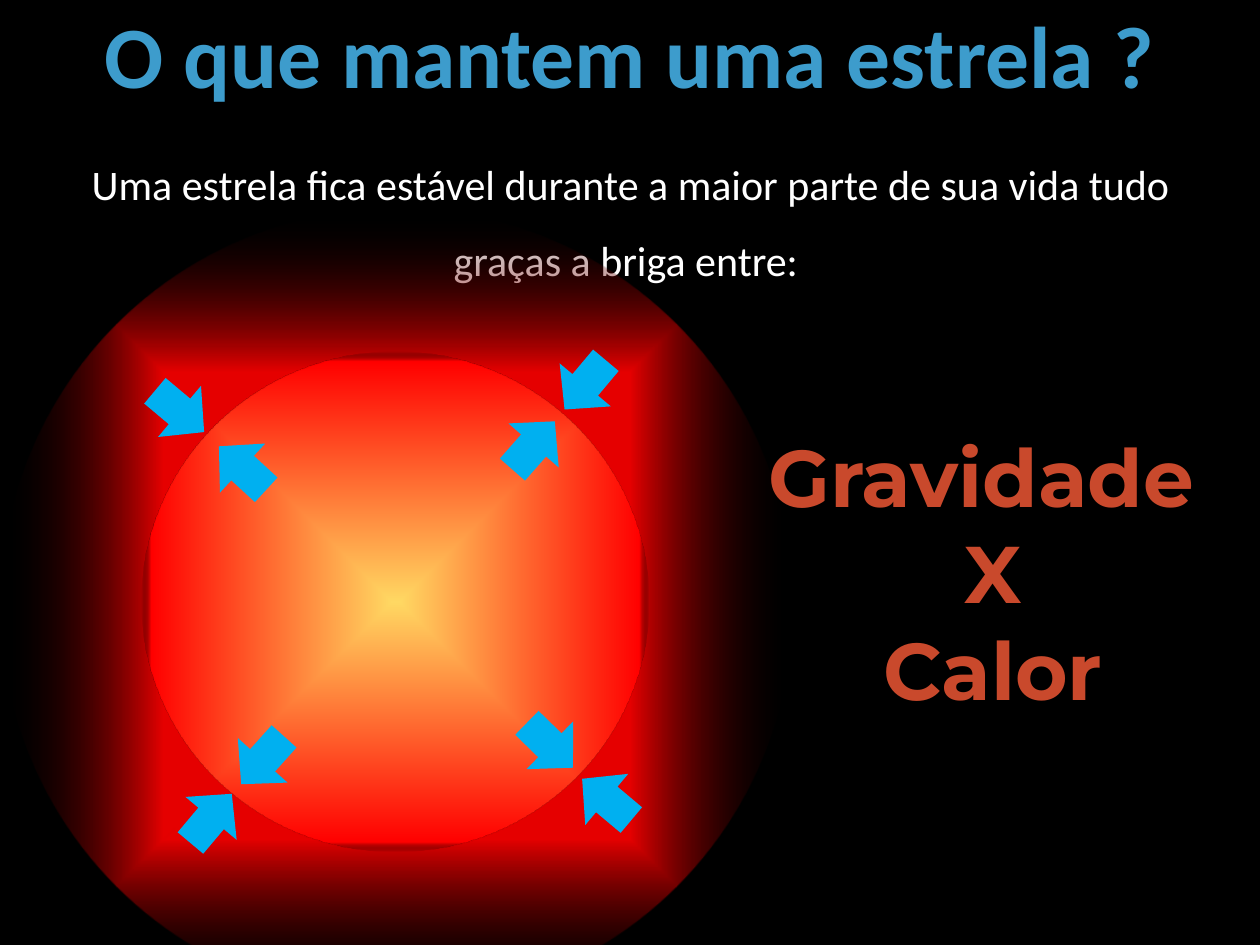
from dataclasses import dataclass

from lxml.etree import SubElement
from pptx import Presentation
from pptx.dml.color import RGBColor
from pptx.enum.shapes import MSO_SHAPE
from pptx.enum.text import MSO_ANCHOR, MSO_AUTO_SIZE, PP_ALIGN
from pptx.oxml.ns import qn
from pptx.util import Inches, Pt

CELL = 0.1  # the slide is a grid of 100 columns by 75 rows
COLS, ROWS = 100, 75


@dataclass(frozen=True)
class Theme:
    background: str = "000000"
    title: str = "3D9CCC"
    body: str = "FFFFFF"
    forces: str = "C9492C"
    arrow: str = "00B0F0"
    text_font: str = "Calibri"
    forces_font: str = "Montserrat"
    title_size: float = 50
    body_size: float = 24
    forces_size: float = 45.9


THEME = Theme()

# Gradient stops from the centre outwards: position %, colour, opacity %
HALO_STOPS = [(59, "FF0000", 89), (100, "000000", 0)]
CORE_STOPS = [(0, "FFD963", 100), (96, "FF0000", 100), (100, "000000", 0)]

ARROW_SIZE = (5.3, 5.1)
# Left column, top row, rotation
GRAVITY_ARROWS = [(43.8, 28, 40), (14.1, 62.4, 220), (11.6, 30.1, 310), (45.5, 60.9, 130)]
HEAT_ARROWS = [(41, 56.6, 314.3), (39.7, 32.8, 221.3), (16.6, 34.6, 132.6), (18.2, 57.8, 41.9)]


def grid(*cells):
    return [Inches(cell * CELL) for cell in cells]


def place(sp, *cells):
    sp.left, sp.top, sp.width, sp.height = grid(*cells)


def write(sp, text, font, size, color, bold=False, spacing=1.0):
    """Fill a text shape with centred, top-anchored, unbulleted paragraphs."""
    tf = sp.text_frame
    tf.text = text
    tf.word_wrap = True
    tf.auto_size = MSO_AUTO_SIZE.NONE
    tf.vertical_anchor = MSO_ANCHOR.TOP
    for p in tf.paragraphs:
        p.alignment = PP_ALIGN.CENTER
        p.line_spacing = spacing
        p.space_before = Pt(0)
        pPr = p._p.get_or_add_pPr()
        pPr.set("marL", "0")
        pPr.set("indent", "0")
        SubElement(pPr, qn("a:buNone"))
        for r in p.runs:
            r.font.name = font
            r.font.size = Pt(size)
            r.font.bold = bold
            r.font.color.rgb = RGBColor.from_string(color)


def add_plain_shape(shapes, kind, *cells):
    sp = shapes.add_shape(kind, *grid(*cells))
    sp.shadow.inherit = False
    sp.line.fill.background()
    return sp


def fill_from_centre(sp, stops):
    """Give the shape a gradient that spreads from its centre."""
    sp.fill.background()
    spPr = sp._element.spPr
    no_fill = spPr.find(qn("a:noFill"))
    grad = SubElement(spPr, qn("a:gradFill"), rotWithShape="1")
    spPr.replace(no_fill, grad)
    gs_list = SubElement(grad, qn("a:gsLst"))
    for position, color, opacity in stops:
        gs = SubElement(gs_list, qn("a:gs"), pos=str(position * 1000))
        clr = SubElement(gs, qn("a:srgbClr"), val=color)
        if opacity < 100:
            SubElement(clr, qn("a:alpha"), val=str(opacity * 1000))
    gradient_path = SubElement(grad, qn("a:path"))
    gradient_path.set("path", "shape")
    SubElement(gradient_path, qn("a:fillToRect"), {side: "50000" for side in "ltrb"})


def add_star(s):
    star = s.shapes.add_group_shape()
    halo = add_plain_shape(star.shapes, MSO_SHAPE.OVAL, 0, 16.6, 62.9, 63)
    fill_from_centre(halo, HALO_STOPS)
    core = add_plain_shape(star.shapes, MSO_SHAPE.OVAL, 11.2, 27.9, 40.3, 39.7)
    fill_from_centre(core, CORE_STOPS)


def add_arrow(s, left, top, rotation):
    sp = add_plain_shape(s.shapes, MSO_SHAPE.DOWN_ARROW, left, top, *ARROW_SIZE)
    sp.fill.solid()
    sp.fill.fore_color.rgb = RGBColor.from_string(THEME.arrow)
    sp.rotation = rotation


def main():
    prs = Presentation()
    prs.slide_width, prs.slide_height = grid(COLS, ROWS)
    s = prs.slides.add_slide(prs.slide_layouts[1])
    s.background.fill.solid()
    s.background.fill.fore_color.rgb = RGBColor.from_string(THEME.background)

    title, body = s.shapes.title, s.placeholders[1]
    place(title, 6.9, 0.5, 86.2, 14.5)
    write(title, "O que mantem uma estrela ?", THEME.text_font,
          THEME.title_size, THEME.title, bold=True, spacing=0.9)
    place(body, 2.8, 10.1, 94.5, 13.1)
    write(body, "Uma estrela fica estável durante a maior parte de sua vida tudo "
          "graças a briga entre: ", THEME.text_font,
          THEME.body_size, THEME.body, spacing=1.5)

    add_star(s)
    for arrow in GRAVITY_ARROWS + HEAT_ARROWS:
        add_arrow(s, *arrow)

    forces = s.shapes.add_textbox(*grid(59.8, 33.4, 38, 24.9))
    write(forces, "Gravidade \nX\nCalor", THEME.forces_font,
          THEME.forces_size, THEME.forces, bold=True)

    prs.save("out.pptx")


if __name__ == "__main__":
    main()
